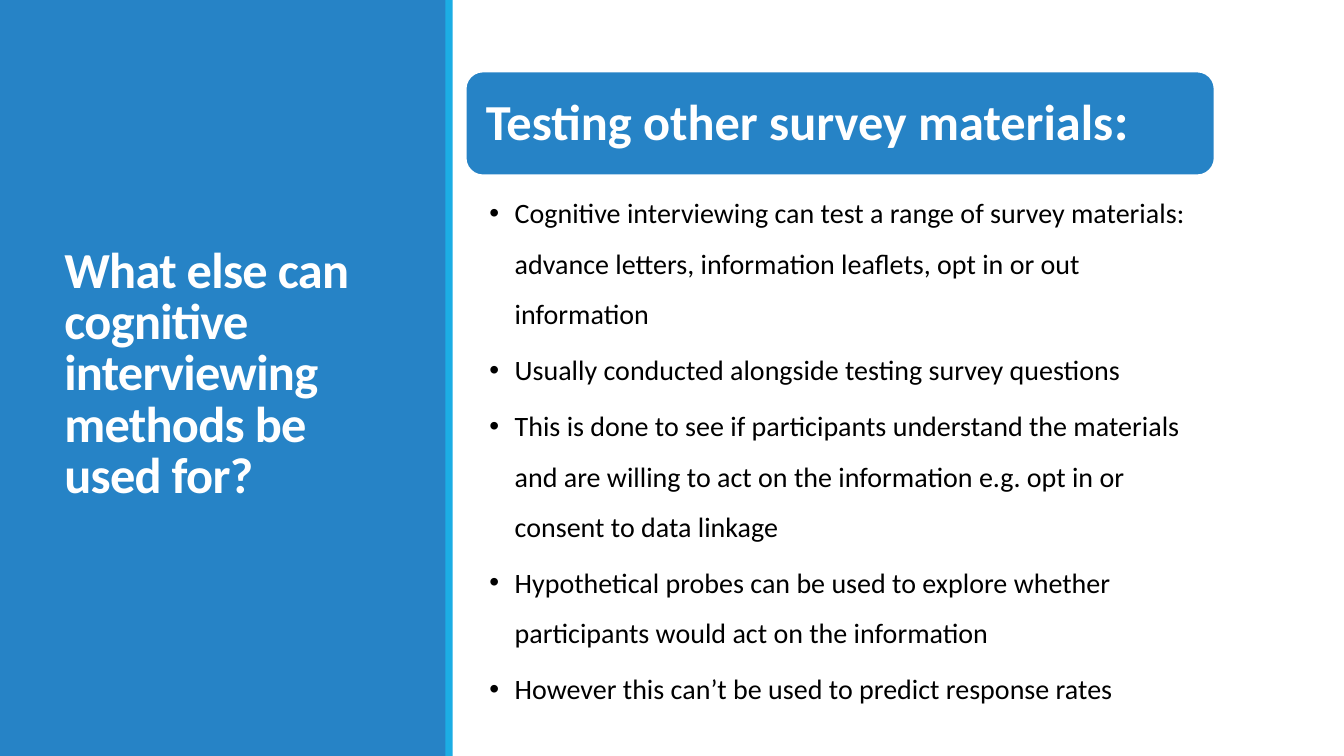
from pptx import Presentation
from pptx.dml.color import RGBColor
from pptx.enum.shapes import MSO_SHAPE
from pptx.enum.text import MSO_ANCHOR
from pptx.util import Pt
from lxml import etree

TITLE = "What else can cognitive interviewing methods be used for?"
HEADING = [("Testing other survey materials", 36), (":", 38)]
BULLETS = [
    "Cognitive interviewing can test a range of survey materials: advance letters, information leaflets, opt in or out information",
    "Usually conducted alongside testing survey questions",
    "This is done to see if participants understand the materials and are willing to act on the information e.g. opt in or consent to data linkage",
    "Hypothetical probes can be used to explore whether participants would act on the information",
    "However this can’t be used to predict response rates",
]

BLUE = RGBColor(0x26, 0x83, 0xC6)
CYAN = RGBColor(0x1C, 0xAD, 0xE4)
WHITE = RGBColor(0xFF, 0xFF, 0xFF)
BLACK = RGBColor(0, 0, 0)
FONT = "Calibri"
RECT, ROUNDED = MSO_SHAPE.RECTANGLE, MSO_SHAPE.ROUNDED_RECTANGLE
TOP, MIDDLE = MSO_ANCHOR.TOP, MSO_ANCHOR.MIDDLE

W, H = 960, 540
PANEL_W, STRIPE_X, STRIPE_W = 319, 318.24, 5.04
CONTENT_X, CONTENT_W = 332.64, 534.96
HEADING_Y, HEADING_H = 51.12, 74.16
BODY_Y, BODY_H = 126, 370.08

prs = Presentation()
prs.slide_width, prs.slide_height = Pt(W), Pt(H)
s = prs.slides.add_slide(prs.slide_layouts[6])


def add_block(kind, x, y, w, h, color):
    sp = s.shapes.add_shape(kind, Pt(x), Pt(y), Pt(w), Pt(h))
    sp.shadow.inherit = False
    sp.fill.solid()
    sp.fill.fore_color.rgb = color
    sp.line.fill.background()
    return sp


def set_frame(sp, anchor, left, top, right, bottom):
    tf = sp.text_frame
    tf.word_wrap = True
    tf.vertical_anchor = anchor
    tf.margin_left, tf.margin_top = Pt(left), Pt(top)
    tf.margin_right, tf.margin_bottom = Pt(right), Pt(bottom)
    return tf


def style_run(r, size, color, bold=False):
    r.font.name = FONT
    r.font.size = Pt(size)
    r.font.bold = bold
    r.font.color.rgb = color


def add_bullet(p, indent):
    pPr = p._p.get_or_add_pPr()
    pPr.set("marL", str(Pt(indent)))
    pPr.set("indent", str(-Pt(indent)))
    ns = pPr.nsmap["a"]
    etree.SubElement(pPr, f"{{{ns}}}buFont").set("typeface", "Arial")
    etree.SubElement(pPr, f"{{{ns}}}buChar").set("char", "•")


add_block(RECT, 0, 0, PANEL_W, H, BLUE)
title = s.shapes.add_textbox(Pt(38.88), Pt(41.04), Pt(242.64), Pt(454.32))
tf = set_frame(title, MIDDLE, 7.2, 3.6, 7.2, 3.6)
tf.text = TITLE
p = tf.paragraphs[0]
p.line_spacing = 0.85
style_run(p.runs[0], 36, WHITE, True)
p.runs[0].font._element.set("spc", "-50")
add_block(RECT, STRIPE_X, 0, STRIPE_W, H, CYAN)

heading = add_block(ROUNDED, CONTENT_X, HEADING_Y, CONTENT_W, HEADING_H, BLUE)
heading.line.color.rgb = WHITE
heading.line.width = Pt(1.25)
tf = set_frame(heading, MIDDLE, 10.8, 10.8, 10.8, 10.8)
p = tf.paragraphs[0]
p.alignment = 1
p.line_spacing = 0.9
for text, size in HEADING:
    r = p.add_run()
    r.text = text
    style_run(r, size, WHITE, True)

body = s.shapes.add_textbox(Pt(CONTENT_X), Pt(BODY_Y), Pt(CONTENT_W), Pt(BODY_H))
tf = set_frame(body, TOP, 17, 2, 11.5, 2)
tf.text = "\n".join(BULLETS)
for p in tf.paragraphs:
    p.line_spacing = 1.5
    p.space_after = Pt(4)
    add_bullet(p, 18)
    style_run(p.runs[0], 20, BLACK)

prs.save("out.pptx")
